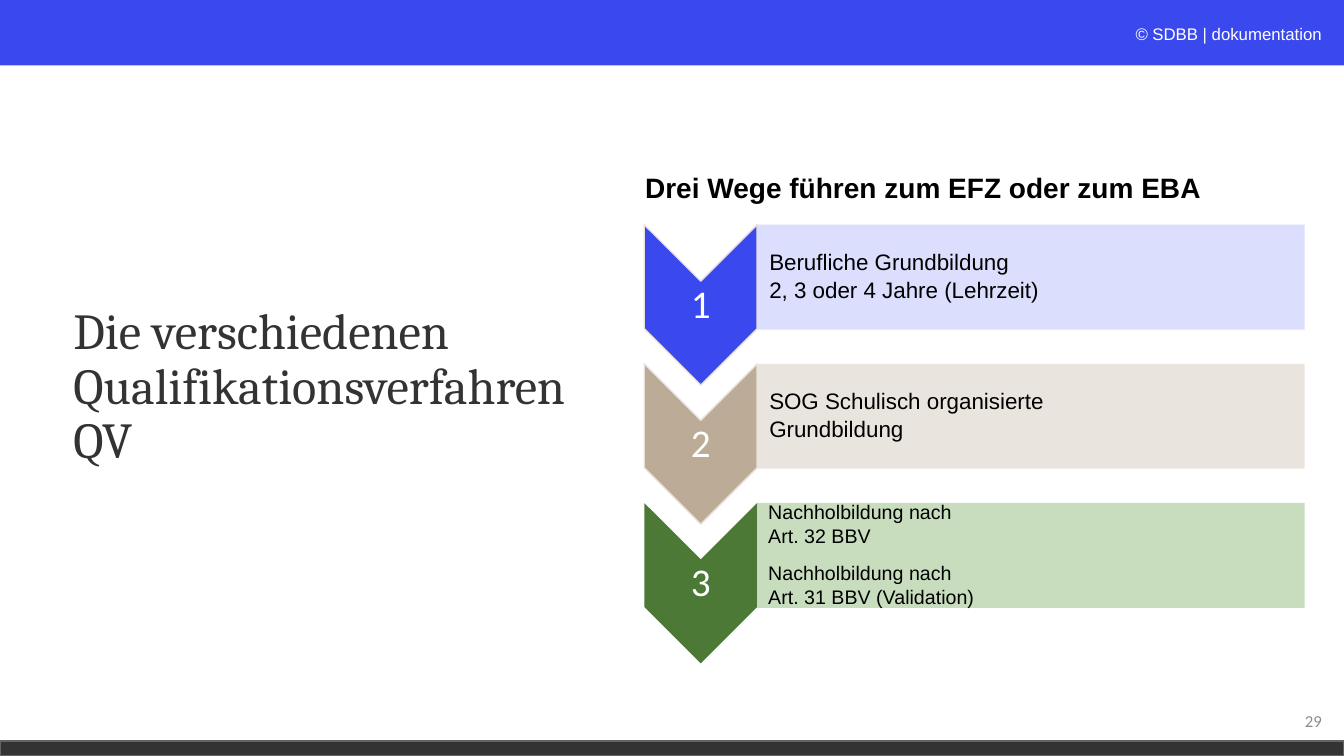
from lxml import etree
from pptx import Presentation
from pptx.dml.color import RGBColor
from pptx.enum import shapes, text
from pptx.oxml import ns
from pptx.util import Inches, Pt

BLUE = RGBColor(0x3A, 0x49, 0xEE)
PALE_BLUE = RGBColor(0xD8, 0xDB, 0xFC)
SAND = RGBColor(0xBC, 0xAB, 0x96)
PALE_SAND = RGBColor(0xE8, 0xE2, 0xDB)
GREEN = RGBColor(0x4C, 0x79, 0x36)
PALE_GREEN = RGBColor(0xC2, 0xDA, 0xB6)
DARK = RGBColor(0x33, 0x33, 0x33)
EDGE = RGBColor(0x66, 0x63, 0x60)
GREY = RGBColor(0x8C, 0x8C, 0x8C)
WHITE = RGBColor(0xFF, 0xFF, 0xFF)
BLACK = RGBColor(0, 0, 0)

SLIDE_W, SLIDE_H = 13.33, 7.5
LEFT, CENTER, RIGHT = text.PP_ALIGN.LEFT, text.PP_ALIGN.CENTER, text.PP_ALIGN.RIGHT
TOP, MIDDLE = text.MSO_ANCHOR.TOP, text.MSO_ANCHOR.MIDDLE

# Number, chevron colour, chevron edge, bar colour, text size, left inset,
# groups of lines
WAYS = [
    ("1", BLUE, PALE_SAND, PALE_BLUE, 16, 0.12,
     [["Berufliche Grundbildung", "2, 3 oder 4 Jahre (Lehrzeit)"]]),
    ("2", SAND, PALE_SAND, PALE_SAND, 16, 0.12,
     [["SOG Schulisch organisierte", "Grundbildung"]]),
    ("3", GREEN, None, PALE_GREEN, 14, 0.11,
     [["Nachholbildung nach", "Art. 32 BBV"],
      ["Nachholbildung nach", "Art. 31 BBV (Validation)"]]),
]


def add_block(slide, kind, box, fill, edge=None):
    block = slide.shapes.add_shape(kind, *map(Inches, box))
    block.shadow.inherit = False
    block.fill.solid()
    block.fill.fore_color.rgb = fill
    if edge is None:
        block.line.fill.background()
    else:
        block.line.color.rgb = edge
        block.line.width = Pt(1)
    return block


def set_frame(frame, anchor=TOP, insets=(0.1, 0.05, 0.1, 0.05), wrap=True):
    left, top, right, bottom = map(Inches, insets)
    layout = {"word_wrap": wrap, "vertical_anchor": anchor,
              "margin_left": left, "margin_top": top,
              "margin_right": right, "margin_bottom": bottom}
    for name, value in layout.items():
        setattr(frame, name, value)


def add_run(paragraph, words, color, **font_values):
    run = paragraph.add_run()
    run.text = words
    run.font.color.rgb = color
    for name, value in font_values.items():
        setattr(run.font, name, value)


def add_label(slide, box, words, color, align=LEFT, spacing=None, frame=None, **font_values):
    label = slide.shapes.add_textbox(*map(Inches, box))
    set_frame(label.text_frame, **(frame or {}))
    paragraph = label.text_frame.paragraphs[0]
    paragraph.alignment = align
    paragraph.line_spacing = spacing
    add_run(paragraph, words, color, **font_values)
    return paragraph


def add_header(slide, left, top, width, height):
    add_block(slide, shapes.MSO_SHAPE.RECTANGLE, (left, top, width, height), BLUE)
    credit = add_label(slide, (left + width - 4.71, top + 0.19, 4.59, 0.3), "© ",
                       WHITE, RIGHT, name="Arial", size=Pt(12), italic=True)
    add_run(credit, "SDBB | dokumentation", WHITE, name="Arial", size=Pt(12))


def add_footer(slide, left, top, width, height):
    add_block(slide, shapes.MSO_SHAPE.RECTANGLE, (left, top, width, height), DARK, EDGE)
    add_label(slide, (left + width - 3.12, top - 0.4, 3, 0.4), "29", GREY, RIGHT,
              frame={"anchor": MIDDLE}, name="Calibri", size=Pt(12))


def add_title(slide, *box):
    add_label(slide, box, "Die verschiedenen Qualifikationsverfahren QV", DARK,
              spacing=0.9, frame={"anchor": MIDDLE}, name="Cambria", size=Pt(36))


def add_way(slide, left, top, width, bar_height, way):
    number, color, edge, pale, size, inset, groups = way
    chevron_w, chevron_h = 1.12, 1.59

    # Chevron turned to point down, so its box is laid out sideways
    shift = (chevron_h - chevron_w) / 2
    chevron = add_block(slide, shapes.MSO_SHAPE.CHEVRON,
                        (left - shift, top + shift, chevron_h, chevron_w), color, edge)
    chevron.rotation = 90
    add_label(slide, (left, top + chevron_w / 2, chevron_w, 0.48), number, WHITE, CENTER,
              spacing=0.9, frame={"anchor": MIDDLE, "insets": [0.02] * 4},
              name="Calibri", size=Pt(28))

    # Bar with its lines of text
    bar = add_block(slide, shapes.MSO_SHAPE.RECTANGLE,
                    (left + chevron_w, top, width - chevron_w, bar_height), pale)
    tint = bar.fill._xPr.find(".//" + ns.qn("a:srgbClr"))
    etree.SubElement(tint, ns.qn("a:alpha"), val="90000")
    frame = bar.text_frame
    set_frame(frame, MIDDLE, (inset, 0.01, 0.01, 0.01))
    lines = [(line, group > 0 and row == 0)
             for group, members in enumerate(groups) for row, line in enumerate(members)]
    for index, (line, opens_group) in enumerate(lines):
        paragraph = frame.add_paragraph() if index else frame.paragraphs[0]
        paragraph.alignment = LEFT
        paragraph.line_spacing = 0.9
        paragraph.space_after = Pt(size * 0.15)
        if opens_group:
            paragraph.space_before = Pt(9)
        add_run(paragraph, line, BLACK, name="Arial", size=Pt(size))


def add_ways(slide, left, top, width):
    add_label(slide, (left - 0.09, top, 5.76, 0.44), "Drei Wege führen zum EFZ oder zum EBA",
              BLACK, frame={"wrap": False}, name="Arial", size=Pt(20), bold=True)
    for index, way in enumerate(WAYS):
        add_way(slide, left, top + 0.59 + index * 1.38, width, 1.04, way)


def main():
    deck = Presentation()
    deck.slide_width, deck.slide_height = Inches(SLIDE_W), Inches(SLIDE_H)
    slide = deck.slides.add_slide(deck.slide_layouts[6])
    add_header(slide, 0, 0, SLIDE_W, 0.65)
    add_footer(slide, 0, 7.35, SLIDE_W, 0.15)
    add_title(slide, 0.63, 2.05, 5.76, 3.6)
    add_ways(slide, 6.39, 1.64, 6.55)
    deck.save("out.pptx")


if __name__ == "__main__":
    main()
